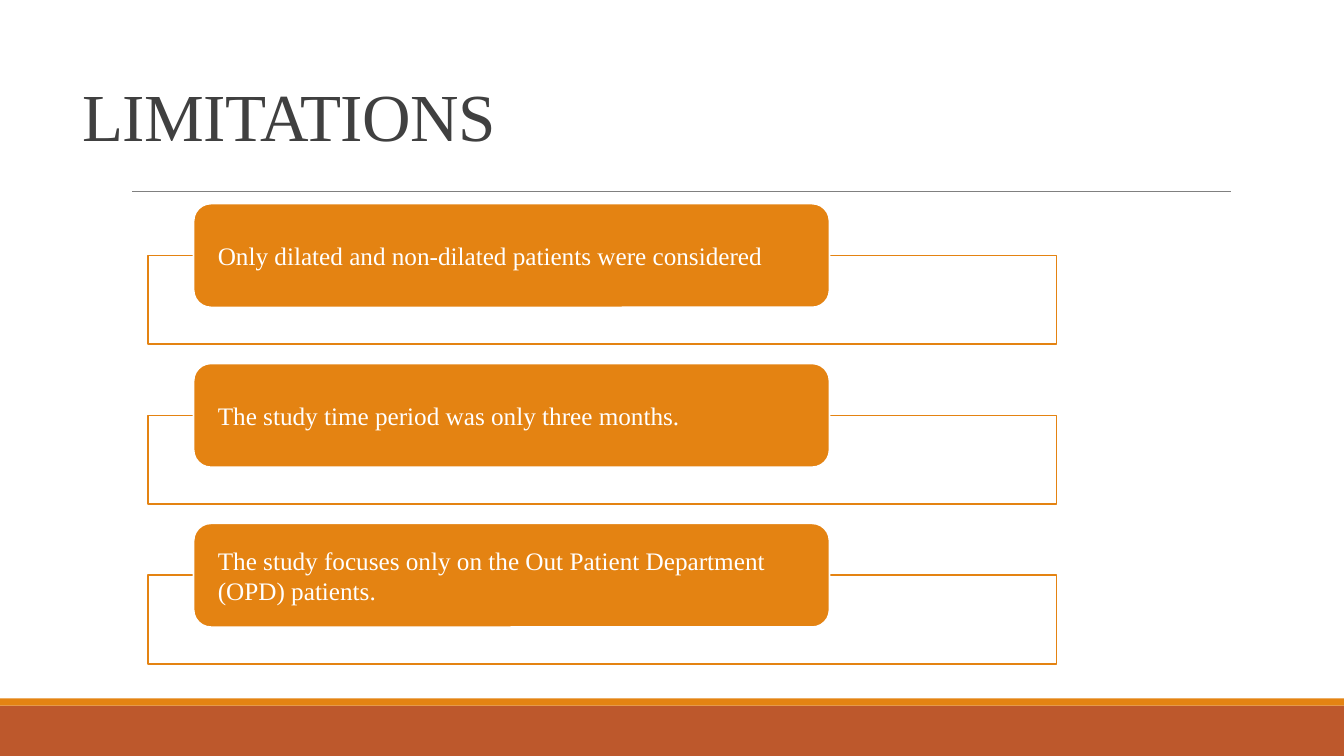
from pptx import Presentation
from pptx.dml.color import RGBColor
from pptx.enum.shapes import MSO_CONNECTOR, MSO_SHAPE
from pptx.enum.text import MSO_ANCHOR, PP_ALIGN
from pptx.oxml.ns import qn
from pptx.util import Inches, Pt
from lxml import etree

RECTANGLE = MSO_SHAPE.RECTANGLE
ROUNDED = MSO_SHAPE.ROUNDED_RECTANGLE
STRAIGHT = MSO_CONNECTOR.STRAIGHT
BOTTOM, MIDDLE = MSO_ANCHOR.BOTTOM, MSO_ANCHOR.MIDDLE
LEFT_ALIGN = PP_ALIGN.LEFT

FONT = "Times New Roman"
ORANGE, RUST, WHITE = "E48312", "BD582C", "FFFFFF"
DARK, GREY = "404040", "808080"

LIMITATIONS = [
    "Only dilated and non-dilated patients were considered",
    "The study time period was only three months.",
    "The study focuses only on the Out Patient Department (OPD) patients.",
]


def color(hex_value):
    return RGBColor.from_string(hex_value)


def add_box(page, kind, left, top, width, height, fill, line=None):
    """Add a flat filled shape, outlined only when a line colour is given."""
    box = page.shapes.add_shape(
        kind, Inches(left), Inches(top), Inches(width), Inches(height))
    box.shadow.inherit = False
    box.fill.solid()
    box.fill.fore_color.rgb = color(fill)
    if line:
        box.line.color.rgb = color(line)
        box.line.width = Pt(1.25)
    else:
        box.line.fill.background()
    return box


def write(box, text, size, hex_value, anchor, side_inset, end_inset):
    """Fill a shape with one left-aligned paragraph and return its parts."""
    frame = box.text_frame
    frame.word_wrap = True
    frame.vertical_anchor = anchor
    frame.margin_left = frame.margin_right = Inches(side_inset)
    frame.margin_top = frame.margin_bottom = Inches(end_inset)
    para = frame.paragraphs[0]
    para.alignment = LEFT_ALIGN
    span = para.add_run()
    span.text = text
    span.font.name = FONT
    span.font.size = Pt(size)
    span.font.color.rgb = color(hex_value)
    return para, span


def add_footer_bands(page, top, width, bottom):
    stripe = 0.07
    add_box(page, RECTANGLE, 0, top + stripe, width, bottom - top - stripe, RUST)
    add_box(page, RECTANGLE, 0, top, width, stripe, ORANGE)


def add_title(page, left, top, width, height):
    box = page.shapes.add_textbox(
        Inches(left), Inches(top), Inches(width), Inches(height))
    para, span = write(box, "LIMITATIONS", 48, DARK, BOTTOM, 0.1, 0.05)
    para.line_spacing = 0.85
    span.font._element.set("spc", "-50")


def add_rule(page, left, top, width):
    rule = page.shapes.add_connector(
        STRAIGHT, Inches(left), Inches(top), Inches(left + width), Inches(top))
    rule.line.color.rgb = color(GREY)
    rule.line.width = Pt(0.5)
    etree.SubElement(rule._element.spPr, qn("a:effectLst"))


def add_limitation_list(page, left, top, width, items):
    """Stack the items, each a rounded label over an outlined frame."""
    pitch, label_height, frame_height = 1.586, 1.03, 0.88
    for index, text in enumerate(items):
        label_top = top + index * pitch
        frame = add_box(page, RECTANGLE, left, label_top + label_height / 2,
                        width, frame_height, WHITE, ORANGE)
        solid = frame.fill._xPr.find(qn("a:solidFill"))
        etree.SubElement(solid[0], qn("a:alpha"), val="90000")
        label = add_box(page, ROUNDED, left + 0.05 * width, label_top,
                        0.7 * width, label_height, ORANGE, WHITE)
        write(label, text, 18, WHITE, MIDDLE, 0.19, 0)


def main():
    deck = Presentation()
    deck.slide_width, deck.slide_height = Inches(13.33), Inches(7.5)
    page = deck.slides.add_slide(deck.slide_layouts[6])
    add_footer_bands(page, 6.93, 13.33, 7.5)
    add_rule(page, 1.31, 1.9, 10.9)
    add_title(page, 0.72, 0, 11, 1.59)
    add_limitation_list(page, 1.47, 2.02, 9.01, LIMITATIONS)
    deck.save("out.pptx")


if __name__ == "__main__":
    main()
